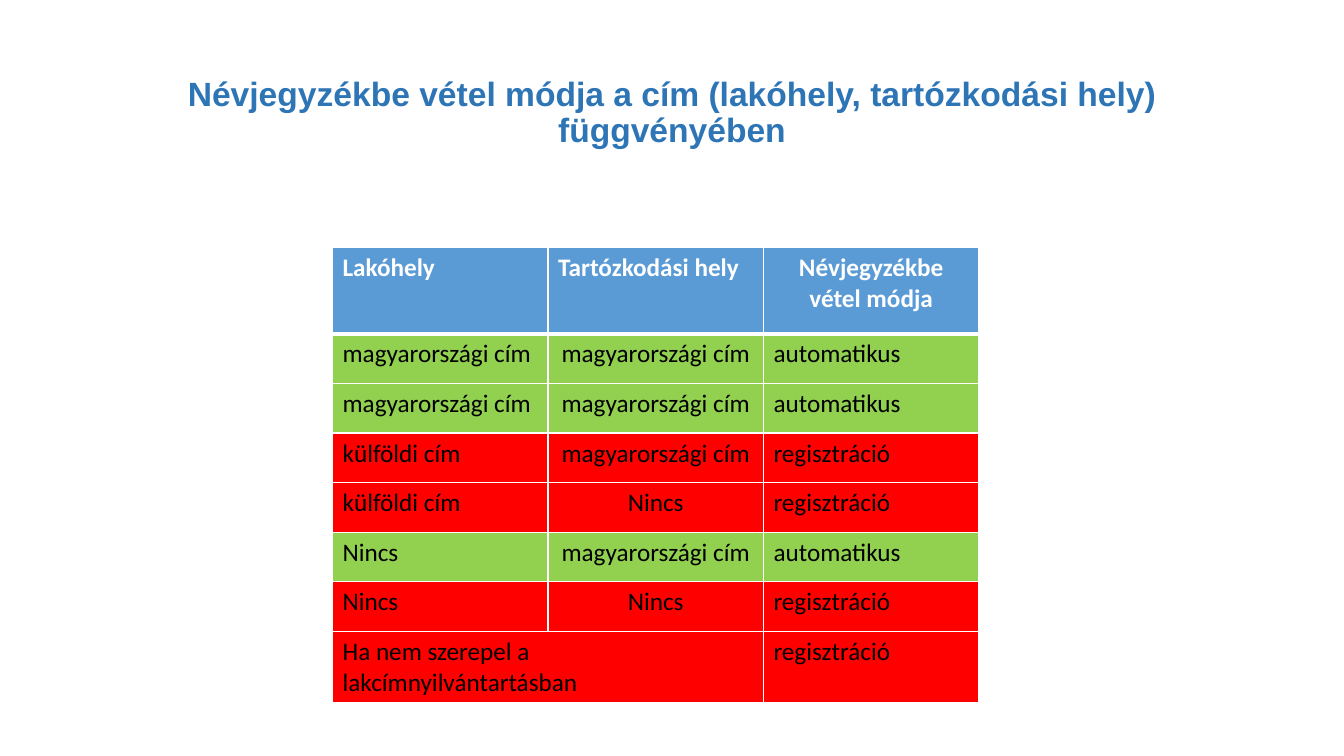
from dataclasses import dataclass

from lxml.etree import SubElement
from pptx import Presentation
from pptx.dml.color import RGBColor
from pptx.enum.text import MSO_ANCHOR, MSO_AUTO_SIZE, PP_ALIGN
from pptx.oxml.ns import qn
from pptx.util import Cm, Pt


@dataclass(frozen=True)
class Theme:
    """Colours, fonts and type sizes of the slide."""
    title_color: str = "2E75B6"
    header_fill: str = "5B9BD5"
    automatic_fill: str = "92D050"
    registration_fill: str = "FF0000"
    light: str = "FFFFFF"
    dark: str = "000000"
    title_font: str = "Arial"
    table_font: str = "Calibri"
    title_size: int = 24
    table_size: int = 18
    thin: int = 1
    thick: int = 3


THEME = Theme()
HOME, ABROAD, NONE = "magyarországi cím", "külföldi cím", "Nincs"
AUTOMATIC, REGISTRATION = "automatikus", "regisztráció"
HEADER = ("Lakóhely", "Tartózkodási hely", "Névjegyzékbe vétel módja")
RULES = (
    (HOME, HOME, AUTOMATIC),
    (HOME, HOME, AUTOMATIC),
    (ABROAD, HOME, REGISTRATION),
    (ABROAD, NONE, REGISTRATION),
    (NONE, HOME, AUTOMATIC),
    (NONE, NONE, REGISTRATION),
    ("Ha nem szerepel a lakcímnyilvántartásban", "", REGISTRATION),
)
HEADER_HEIGHT, RULE_HEIGHT, LAST_HEIGHT = Cm(2.18), Cm(1.25), Cm(1.78)


def style_text(para, font, size, color, bold, align):
    """Format every run of a paragraph."""
    para.alignment = align
    for span in para.runs:
        span.font.name = font
        span.font.size = Pt(size)
        span.font.bold = bold
        span.font.color.rgb = RGBColor.from_string(color)


def draw_borders(cell, widths):
    """Give the cell light borders, with one width in points per side."""
    properties = cell._tc.get_or_add_tcPr()
    for side, width in widths.items():
        line = SubElement(properties, qn(f"a:ln{side}"), w=str(Pt(width)))
        fill = SubElement(line, qn("a:solidFill"))
        SubElement(fill, qn("a:srgbClr"), val=THEME.light)


def add_title(page, left, top, width, height):
    """Place the centred heading in the title placeholder."""
    title = page.shapes.title
    title.left, title.top, title.width, title.height = left, top, width, height
    frame = title.text_frame
    frame.text = "Névjegyzékbe vétel módja a cím (lakóhely, tartózkodási hely) függvényében"
    frame.word_wrap = True
    frame.auto_size = MSO_AUTO_SIZE.NONE
    frame.vertical_anchor = MSO_ANCHOR.MIDDLE
    para = frame.paragraphs[0]
    para.line_spacing = 0.9
    style_text(para, THEME.title_font, THEME.title_size, THEME.title_color,
               True, PP_ALIGN.CENTER)


def add_rules_table(page, left, top, width):
    """Place the table of address combinations and registration methods."""
    heights = [HEADER_HEIGHT] + [RULE_HEIGHT] * (len(RULES) - 1) + [LAST_HEIGHT]
    table = page.shapes.add_table(len(heights), len(HEADER), left, top,
                                  width, sum(heights)).table
    for row, height in zip(table.rows, heights):
        row.height = height
    for column in table.columns:
        column.width = width // len(HEADER)
    table.cell(len(RULES), 0).merge(table.cell(len(RULES), 1))

    for row_index, texts in enumerate((HEADER,) + RULES):
        is_header = row_index == 0
        if is_header:
            fill = THEME.header_fill
        else:
            fill = THEME.automatic_fill if texts[-1] == AUTOMATIC else THEME.registration_fill
        centred_column = 2 if is_header else 1
        widths = {
            "L": THEME.thin,
            "R": THEME.thin,
            "T": THEME.thick if row_index == 1 else THEME.thin,
            "B": THEME.thick if is_header else THEME.thin,
        }
        for column_index, text in enumerate(texts):
            cell = table.cell(row_index, column_index)
            draw_borders(cell, widths)
            cell.fill.solid()
            cell.fill.fore_color.rgb = RGBColor.from_string(fill)
            if cell.is_spanned:
                continue
            cell.text_frame.text = text
            align = PP_ALIGN.CENTER if column_index == centred_column else PP_ALIGN.LEFT
            style_text(cell.text_frame.paragraphs[0], THEME.table_font, THEME.table_size,
                       THEME.light if is_header else THEME.dark, is_header, align)


def main():
    """Build the slide and save the deck."""
    deck = Presentation()
    deck.slide_width, deck.slide_height = Cm(33.87), Cm(19.05)
    page = deck.slides.add_slide(deck.slide_layouts[5])
    add_title(page, Cm(2.33), Cm(1.02), Cm(29.21), Cm(3.68))
    add_rules_table(page, Cm(8.38), Cm(6.23), Cm(16.29))
    deck.save("out.pptx")


if __name__ == "__main__":
    main()
